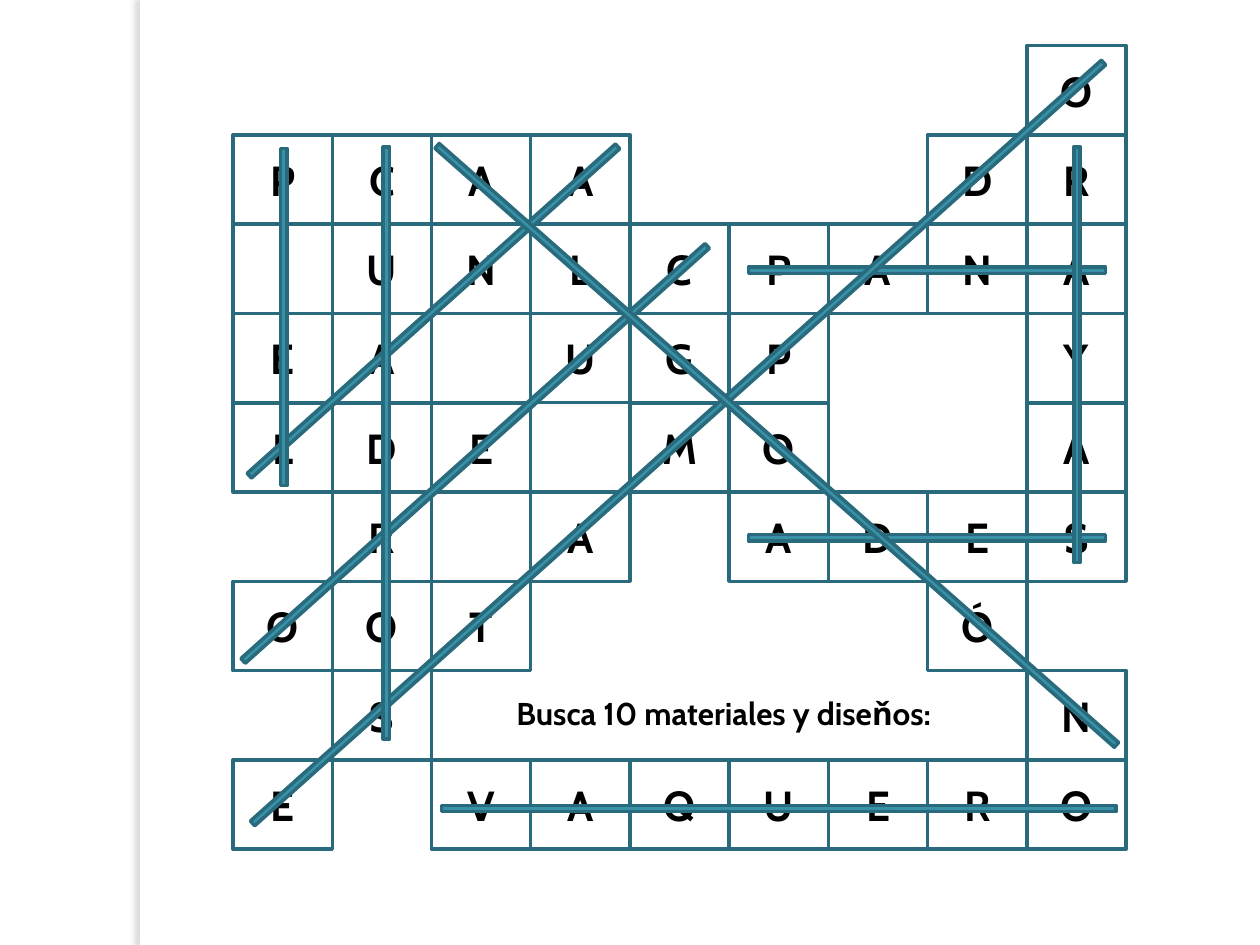
import pptx
import pptx.dml.color
import pptx.enum.shapes
import pptx.enum.text
import pptx.oxml
import pptx.oxml.ns
import pptx.util
from dataclasses import dataclass

Cm = pptx.util.Cm


@dataclass(frozen=True)
class Theme:
    font: str = "Cabin"
    paper: str = "FFFFFF"
    ink: str = "000000"
    outline: str = "296B7C"
    strike: str = "3891A7"
    shade: str = "736F63"
    letter_size: int = 24
    prompt_size: int = 18
    line_width: int = 2


THEME = Theme()

# One string per row; a dot leaves the cell out
LETTERS = [
    "........O",
    "PCAA...DR",
    "IUNLCPANA",
    "EA.UGP..Y",
    "LDE.MO..A",
    ".R.A.ADES",
    "OOT....Ó.",
    ".S......N",
    "E.VAQUERO",
]
CELL_WIDTH, CELL_HEIGHT = 2.0, 1.8

# Centre x and y within the grid, length (cm), rotation (degrees)
STRIKES = [
    (11.0, 15.38, 13.59, 0),       # VAQUERO
    (13.99, 4.53, 7.2, 0),         # PANA
    (4.88, 8.22, 12.55, 318.2),    # CUERO
    (13.99, 9.92, 7.2, 0),         # SEDA
    (8.97, 8.01, 23.01, 318.2),    # ESTAMPADO
    (4.04, 5.35, 9.96, 318.2),     # LANA
    (10.96, 8.06, 18.26, 41.4),    # ALGODÓN
    (17.01, 6.23, 8.38, 90),       # RAYAS
    (3.09, 8.01, 11.94, 90),       # CUADROS
    (1.02, 5.47, 6.8, 90),         # PIEL
]
STRIKE_THICKNESS = 0.13


def color(value):
    return pptx.dml.color.RGBColor.from_string(value)


def add_rectangle(slide, left, top, width, height, fill, outline=None):
    shape = slide.shapes.add_shape(
        pptx.enum.shapes.MSO_SHAPE.RECTANGLE,
        Cm(left), Cm(top), Cm(width), Cm(height))
    shape.shadow.inherit = False
    shape.fill.solid()
    shape.fill.fore_color.rgb = color(fill)
    if outline:
        shape.line.color.rgb = color(outline)
        shape.line.width = pptx.util.Pt(THEME.line_width)
    else:
        shape.line.fill.background()
    return shape


def set_text(shape, text, size, alignment):
    shape.text_frame.text = text
    paragraph = shape.text_frame.paragraphs[0]
    paragraph.alignment = alignment
    font = paragraph.runs[0].font
    font.name = THEME.font
    font.size = pptx.util.Pt(size)
    font.bold = True
    font.color.rgb = color(THEME.ink)


def add_side_band(slide, left, top, width, height):
    """White band whose soft shadow falls to the left."""
    band = add_rectangle(slide, left, top, width, height, THEME.paper)
    effects = band._element.spPr.find(pptx.oxml.ns.qn("a:effectLst"))
    effects.append(pptx.oxml.parse_xml(
        f'<a:outerShdw {pptx.oxml.ns.nsdecls("a")} blurRad="38100" '
        'dist="38100" dir="10800000" algn="tl" rotWithShape="0">'
        f'<a:srgbClr val="{THEME.shade}"><a:alpha val="25000"/></a:srgbClr>'
        '</a:outerShdw>'))


def add_letter_grid(slide, left, top):
    for row, letters in enumerate(LETTERS):
        for column, letter in enumerate(letters):
            if letter == ".":
                continue
            cell = add_rectangle(
                slide, left + column * CELL_WIDTH, top + row * CELL_HEIGHT,
                CELL_WIDTH, CELL_HEIGHT, THEME.paper, THEME.outline)
            cell.text_frame.vertical_anchor = pptx.enum.text.MSO_ANCHOR.MIDDLE
            set_text(cell, letter, THEME.letter_size,
                     pptx.enum.text.PP_ALIGN.CENTER)


def add_prompt(slide, left, top, width, height):
    prompt = slide.shapes.add_textbox(Cm(left), Cm(top), Cm(width), Cm(height))
    prompt.text_frame.word_wrap = False
    prompt.text_frame.auto_size = pptx.enum.text.MSO_AUTO_SIZE.SHAPE_TO_FIT_TEXT
    set_text(prompt, "Busca 10 materiales y diseňos:", THEME.prompt_size,
             pptx.enum.text.PP_ALIGN.LEFT)


def add_strikes(slide, left, top):
    for center_x, center_y, length, rotation in STRIKES:
        strike = add_rectangle(
            slide, left + center_x - length / 2,
            top + center_y - STRIKE_THICKNESS / 2,
            length, STRIKE_THICKNESS, THEME.strike, THEME.outline)
        strike.rotation = rotation


def main():
    presentation = pptx.Presentation()
    presentation.slide_width = Cm(25.4)
    presentation.slide_height = Cm(19.05)
    slide = presentation.slides.add_slide(presentation.slide_layouts[6])
    slide.background.fill.solid()
    slide.background.fill.fore_color.rgb = color(THEME.paper)

    grid_left, grid_top = 4.7, 0.92
    add_side_band(slide, 2.82, 0, 0.2, 19.05)
    add_letter_grid(slide, grid_left, grid_top)
    add_prompt(slide, grid_left + 5.46, grid_top + 12.95, 9.55, 1.02)
    add_strikes(slide, grid_left, grid_top)

    presentation.save("out.pptx")


if __name__ == "__main__":
    main()
